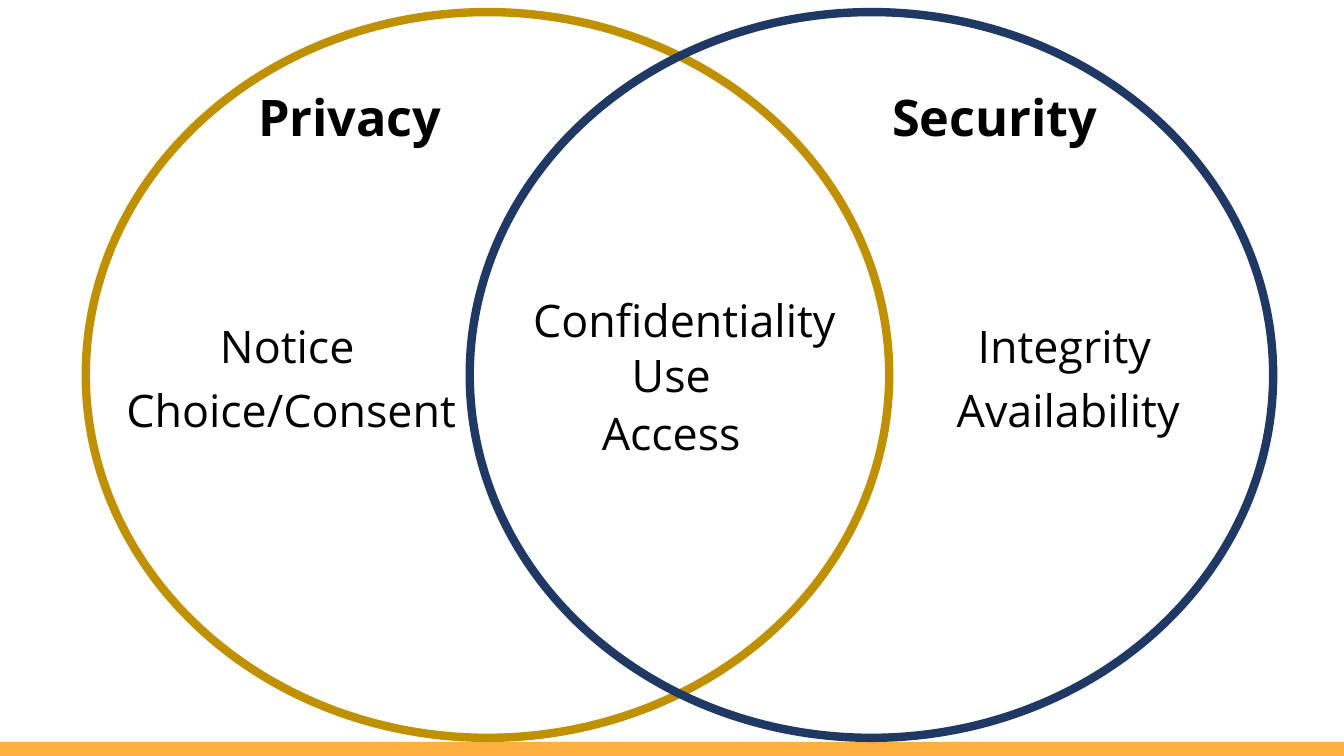
from dataclasses import dataclass

from pptx import Presentation
from pptx.dml.color import RGBColor
from pptx.enum import shapes, text
from pptx import util as u

SLIDE_WIDTH = u.Inches(13.333)
SLIDE_HEIGHT = u.Inches(7.5)


@dataclass(frozen=True)
class Theme:
    font: str = "Open Sans"
    ink: str = "000000"
    privacy: str = "BF9000"
    security: str = "203864"
    footer: str = "FCB040"
    heading_size: int = 36
    item_size: int = 32
    ring_width: int = 6


THEME = Theme()


def across(percent):
    return round(SLIDE_WIDTH * percent / 100)


def down(percent):
    return round(SLIDE_HEIGHT * percent / 100)


def add_footer_bar(slide):
    top = down(98.13)
    bar = slide.shapes.add_shape(
        shapes.MSO_SHAPE.RECTANGLE, 0, top, SLIDE_WIDTH, SLIDE_HEIGHT - top
    )
    bar.shadow.inherit = False
    bar.fill.solid()
    bar.fill.fore_color.rgb = RGBColor.from_string(THEME.footer)
    bar.line.fill.background()


def add_ring(container, left, color):
    ring = container.shapes.add_shape(
        shapes.MSO_SHAPE.OVAL, across(left), down(1.6), across(59.78), down(96)
    )
    ring.shadow.inherit = False
    ring.fill.background()
    ring.line.color.rgb = RGBColor.from_string(color)
    ring.line.width = u.Pt(THEME.ring_width)


def add_label(container, wording, center, top, width, height, size, bold=False):
    label = container.shapes.add_textbox(
        across(center - width / 2), down(top), across(width), down(height)
    )
    frame = label.text_frame
    frame.word_wrap = True
    frame.auto_size = text.MSO_AUTO_SIZE.SHAPE_TO_FIT_TEXT
    frame.text = wording
    paragraph = frame.paragraphs[0]
    paragraph.alignment = text.PP_ALIGN.CENTER
    font = paragraph.runs[0].font
    font.name = THEME.font
    font.size = u.Pt(size)
    font.bold = bold
    font.color.rgb = RGBColor.from_string(THEME.ink)


def add_heading(slide, wording, center):
    add_label(slide, wording, center, 10.8, 17.85, 9.47, THEME.heading_size, True)


def add_item(container, wording, center, top):
    add_label(container, wording, center, top, 27.45, 8.53, THEME.item_size)


def add_side_items(slide, wordings, center):
    group = slide.shapes.add_group_shape()
    for row, wording in enumerate(wordings):
        add_item(group, wording, center + 0.3 * row, 41.47 + 8.53 * row)


def main():
    presentation = Presentation()
    presentation.slide_width = SLIDE_WIDTH
    presentation.slide_height = SLIDE_HEIGHT
    slide = presentation.slides.add_slide(presentation.slide_layouts[6])

    add_footer_bar(slide)
    rings = slide.shapes.add_group_shape()
    add_ring(rings, 6.38, THEME.privacy)
    add_ring(rings, 34.95, THEME.security)

    add_heading(slide, "Privacy", 26.03)
    add_heading(slide, "Security", 74.03)

    add_item(slide, "Confidentiality", 50.93, 38)
    add_item(slide, "Use", 49.95, 45.33)
    add_item(slide, "Access", 49.95, 53.07)

    add_side_items(slide, ("Integrity", "Availability"), 79.2)
    add_side_items(slide, ("Notice", "Choice/Consent"), 21.38)

    presentation.save("out.pptx")


if __name__ == "__main__":
    main()
